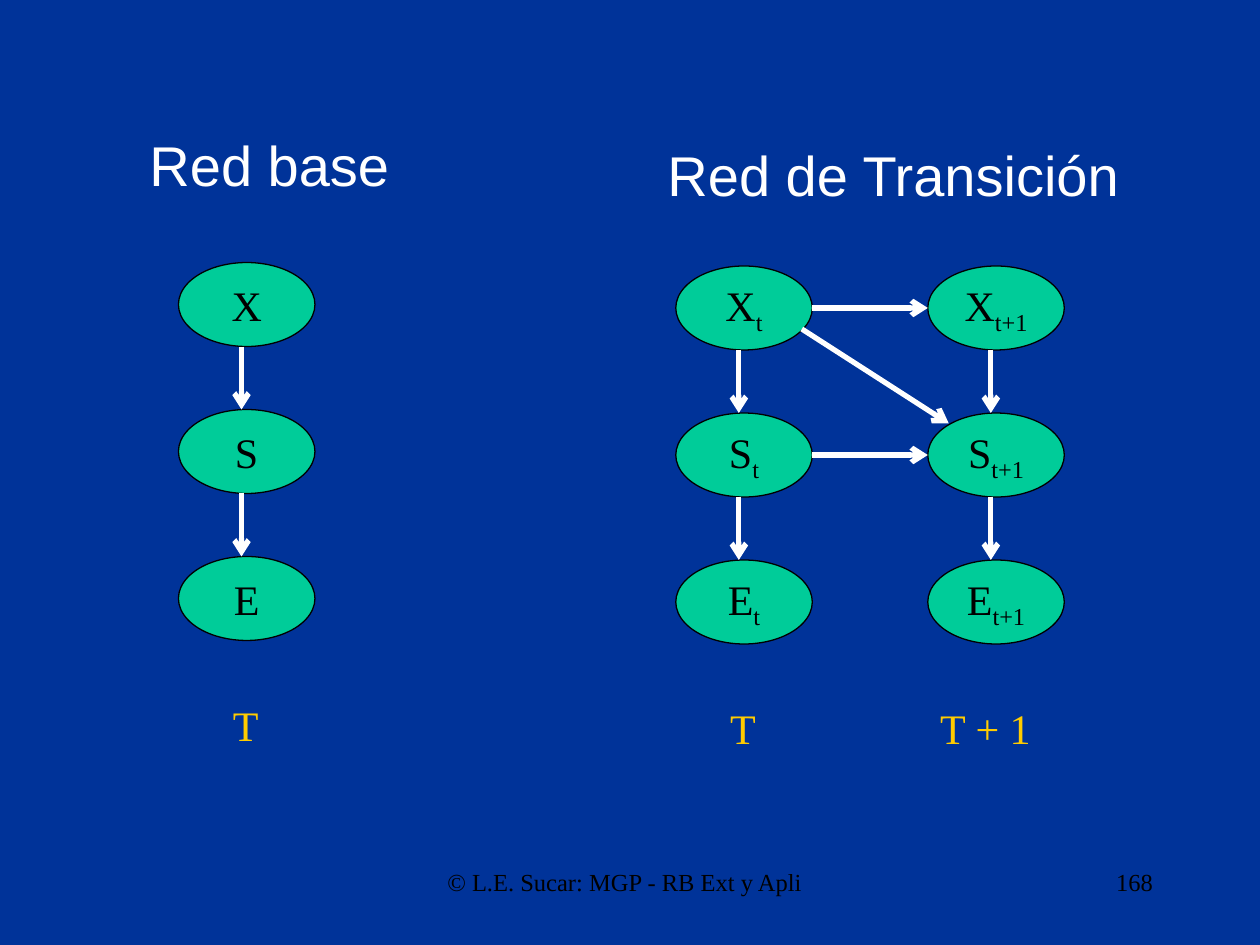
from dataclasses import dataclass

from lxml import etree
from pptx import Presentation
from pptx.dml.color import RGBColor
from pptx.enum.shapes import MSO_CONNECTOR, MSO_SHAPE
from pptx.enum.text import MSO_ANCHOR, MSO_AUTO_SIZE, PP_ALIGN
from pptx.oxml.ns import qn
from pptx.util import Pt

ELLIPSE = MSO_SHAPE.OVAL
STRAIGHT = MSO_CONNECTOR.STRAIGHT
LEFT, CENTER, RIGHT = PP_ALIGN.LEFT, PP_ALIGN.CENTER, PP_ALIGN.RIGHT
MIDDLE = MSO_ANCHOR.MIDDLE
GROW, FIXED = MSO_AUTO_SIZE.SHAPE_TO_FIT_TEXT, MSO_AUTO_SIZE.NONE


@dataclass(frozen=True)
class Theme:
    background: RGBColor = RGBColor(0x00, 0x33, 0x99)
    node: RGBColor = RGBColor(0x00, 0xCC, 0x99)
    ink: RGBColor = RGBColor(0x00, 0x00, 0x00)
    light: RGBColor = RGBColor(0xFF, 0xFF, 0xFF)
    accent: RGBColor = RGBColor(0xFF, 0xCC, 0x00)
    sans: str = "Arial"
    serif: str = "Times New Roman"
    title_size: int = 32
    node_size: int = 24
    footer_size: int = 14


THEME = Theme()
TITLE = {"name": THEME.sans, "size": Pt(THEME.title_size), "color": THEME.light}
NODE = {"name": THEME.serif, "size": Pt(THEME.node_size), "color": THEME.ink}
TIME = {**NODE, "color": THEME.accent}
FOOTER = {**NODE, "size": Pt(THEME.footer_size)}

# Lengths in points
NODE_W, NODE_H = 78, 48
ROW_STEP, COL_STEP = 84, 144
ARROW_X = 36      # vertical arrows, from the left of a node
TIME_Y = 246      # time labels, from the top of the first row
VARIABLES = ("X", "S", "E")


def add_run(p, text, font, baseline=None):
    r = p.add_run()
    r.text = text
    for attr, value in font.items():
        if attr == "color":
            r.font.color.rgb = value
        else:
            setattr(r.font, attr, value)
    if baseline:
        r.font._element.set("baseline", str(baseline))


def add_text(shapes, box, text, font, align=LEFT, auto_size=GROW):
    sp = shapes.add_textbox(*map(Pt, box))
    tf = sp.text_frame
    for attr, value in {"word_wrap": True, "auto_size": auto_size}.items():
        setattr(tf, attr, value)
    p = tf.paragraphs[0]
    p.alignment = align
    add_run(p, text, font)


def add_node(shapes, x, y, variable, index):
    sp = shapes.add_shape(ELLIPSE, Pt(x), Pt(y), Pt(NODE_W), Pt(NODE_H))
    sp.shadow.inherit = False
    sp.fill.solid()
    sp.fill.fore_color.rgb = THEME.node
    sp.line.color.rgb = THEME.ink
    sp.line.width = Pt(0.75)
    tf = sp.text_frame
    for attr, value in {"word_wrap": False, "vertical_anchor": MIDDLE}.items():
        setattr(tf, attr, value)
    p = tf.paragraphs[0]
    p.alignment = CENTER
    add_run(p, variable, NODE)
    if index:
        add_run(p, index, NODE, baseline=-25000)


def add_arrow(shapes, x1, y1, x2, y2):
    line = shapes.add_connector(STRAIGHT, Pt(x1), Pt(y1), Pt(x2), Pt(y2))
    line.line.color.rgb = THEME.light
    line.line.width = Pt(3)
    ln = line.line._get_or_add_ln()
    etree.SubElement(ln, qn("a:tailEnd"), type="arrow")
    etree.SubElement(line._element.spPr, qn("a:effectLst"))


def add_time_slice(shapes, x, y, index, label, label_dx, label_w):
    """One column: the chain X, S, E with its time label below."""
    for row, variable in enumerate(VARIABLES):
        top = y + row * ROW_STEP
        add_node(shapes, x, top, variable, index)
        if row:
            add_arrow(shapes, x + ARROW_X, top - ROW_STEP + NODE_H,
                      x + ARROW_X, top)
    add_text(shapes, (x + label_dx, y + TIME_Y, label_w, 36), label, TIME)


def add_base_network(s):
    shapes = s.shapes.add_group_shape().shapes
    add_text(shapes, (42.5, 71.3, 223, 45.4), "Red base", TITLE, CENTER)
    add_time_slice(shapes, 102, 150, "", "T", 24, 30)


def add_transition_network(s):
    shapes = s.shapes.add_group_shape().shapes
    x, y = 386.2, 152
    next_x = x + COL_STEP
    add_text(shapes, (371.5, 77, 278, 45.4), "Red de Transición", TITLE, CENTER)
    add_time_slice(shapes, x, y, "t", "T", 24, 30)
    add_time_slice(shapes, next_x, y, "t+1", "T + 1", 0, 72)
    for row in range(2):
        mid = y + row * ROW_STEP + NODE_H / 2
        add_arrow(shapes, x + NODE_W, mid, next_x, mid)
    add_arrow(shapes, x + 72, y + 36, next_x + 12, y + ROW_STEP + 6)


def main():
    prs = Presentation()
    prs.slide_width, prs.slide_height = Pt(720), Pt(540)
    s = prs.slides.add_slide(prs.slide_layouts[6])
    s.background.fill.solid()
    s.background.fill.fore_color.rgb = THEME.background

    add_text(s.shapes, (216, 492, 282, 36),
             "© L.E. Sucar: MGP - RB Ext y Apli", FOOTER, CENTER, FIXED)
    add_text(s.shapes, (516, 492, 150, 36), "168", FOOTER, RIGHT, FIXED)
    add_base_network(s)
    add_transition_network(s)
    prs.save("out.pptx")


if __name__ == "__main__":
    main()
